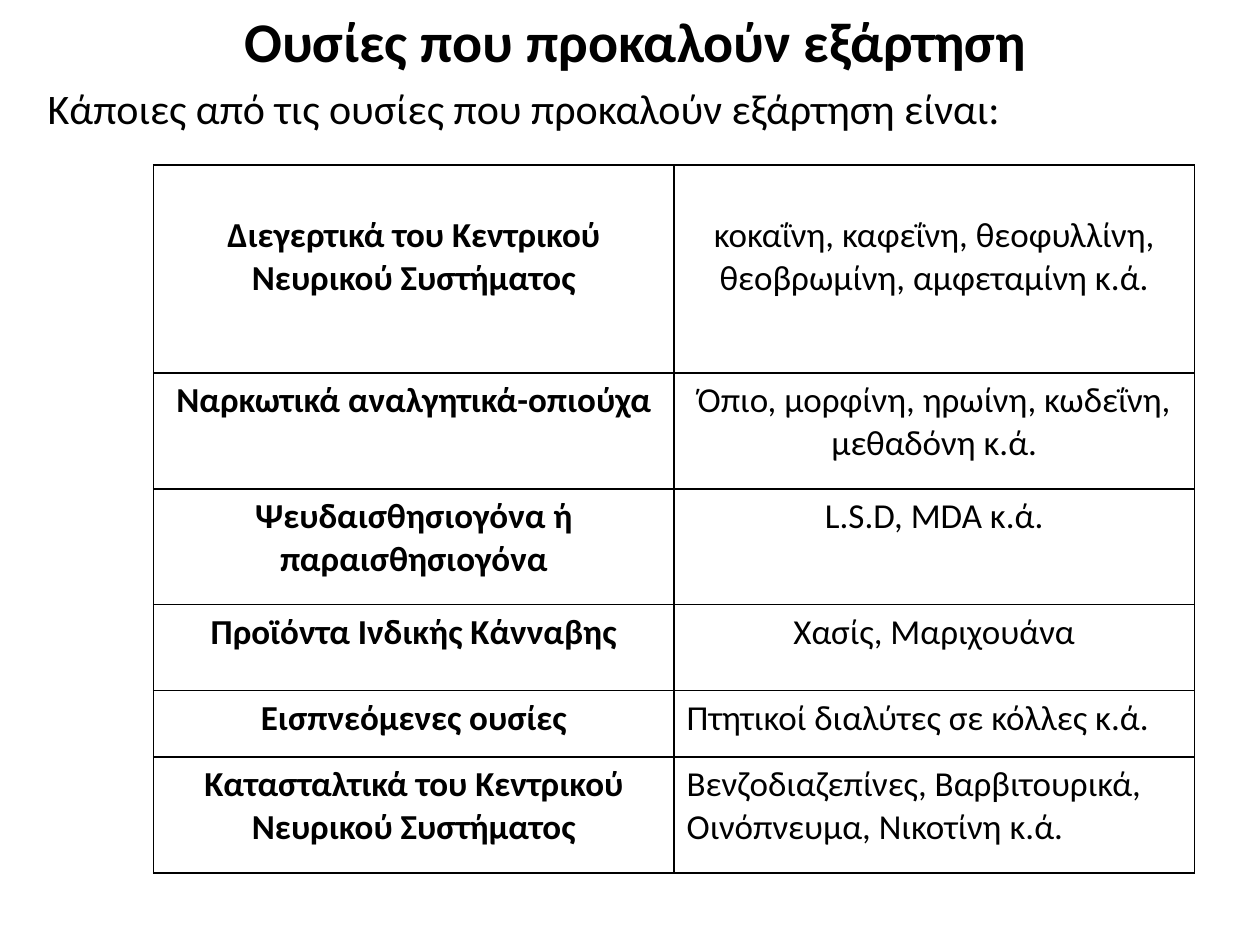
from lxml.etree import SubElement
from pptx import Presentation
from pptx.dml.color import RGBColor as Rgb
from pptx.enum.text import PP_ALIGN as Align
from pptx.oxml.ns import qn
from pptx.util import Inches, Pt

COLORS = {"ink": "000000", "paper": "FFFFFF"}
FONT = "Calibri"
COLS = [4.13, 4.13]
ROWS = [
    (1.65, "Διεγερτικά του Κεντρικού Νευρικού Συστήματος",
     "κοκαΐνη, καφεΐνη, θεοφυλλίνη, θεοβρωμίνη, αμφεταμίνη κ.ά.", Align.CENTER),
    (0.92, "Ναρκωτικά αναλγητικά-οπιούχα",
     "Όπιο, μορφίνη, ηρωίνη, κωδεΐνη, μεθαδόνη κ.ά.", Align.CENTER),
    (0.92, "Ψευδαισθησιογόνα ή παραισθησιογόνα", "L.S.D, MDA κ.ά.", Align.CENTER),
    (0.68, "Προϊόντα Ινδικής Κάνναβης", "Χασίς, Μαριχουάνα", Align.CENTER),
    (0.53, "Εισπνεόμενες ουσίες", "Πτητικοί διαλύτες σε κόλλες κ.ά.", Align.LEFT),
    (0.92, "Κατασταλτικά του Κεντρικού Νευρικού Συστήματος",
     "Βενζοδιαζεπίνες, Βαρβιτουρικά, Οινόπνευμα, Νικοτίνη κ.ά.", Align.LEFT),
]


def write(para, text, size=20, bold=False, align=Align.CENTER, before=0):
    para.alignment = align
    para.space_before = Pt(before)
    run = para.add_run()
    run.text = text
    font = run.font
    font.name, font.size, font.bold = FONT, Pt(size), bold
    font.color.rgb = Rgb.from_string(COLORS["ink"])


class Board:
    """Holds the style and the current slide."""

    def __init__(self, deck):
        self.slide = deck.slides.add_slide(deck.slide_layouts[6])
        fill = self.slide.background.fill
        fill.solid()
        fill.fore_color.rgb = Rgb.from_string(COLORS["paper"])

    def heading(self, box, title, intro):
        frame = self.slide.shapes.add_textbox(*map(Inches, box)).text_frame
        frame.word_wrap = True
        write(frame.paragraphs[0], title, size=32, bold=True)
        write(frame.add_paragraph(), intro, size=24, align=Align.JUSTIFY, before=5)

    def border(self, cell, width=1):
        props = cell._tc.get_or_add_tcPr()
        for side in ("lnL", "lnR", "lnT", "lnB"):
            line = SubElement(props, qn(f"a:{side}"), w=str(Pt(width)))
            fill = SubElement(line, qn("a:solidFill"))
            SubElement(fill, qn("a:srgbClr"), val=COLORS["ink"])

    def table(self, left, top, cols, rows):
        high = sum(row[0] for row in rows)
        box = map(Inches, (left, top, sum(cols), high))
        grid = self.slide.shapes.add_table(len(rows), len(cols), *box).table
        grid.first_row = grid.horz_banding = False
        for col, width in zip(grid.columns, cols):
            col.width = Inches(width)
        for row, (height, group, items, align) in zip(grid.rows, rows):
            row.height = Inches(height)
            styles = ((group, True, Align.CENTER), (items, False, align))
            for cell, (text, bold, side) in zip(row.cells, styles):
                self.border(cell)
                cell.fill.background()
                write(cell.text_frame.paragraphs[0], text, bold=bold, align=side)
        for cell in grid.rows[0].cells:
            cell.margin_top = Inches(0.39)


def main():
    deck = Presentation()
    deck.slide_width, deck.slide_height = Inches(10), Inches(7.5)
    board = Board(deck)
    board.heading((0.28, 0, 9.53, 7.29), "Ουσίες που προκαλούν εξάρτηση",
                  "Κάποιες από τις ουσίες που προκαλούν εξάρτηση είναι:")
    board.table(1.22, 1.31, COLS, ROWS)
    deck.save("out.pptx")


if __name__ == "__main__":
    main()
